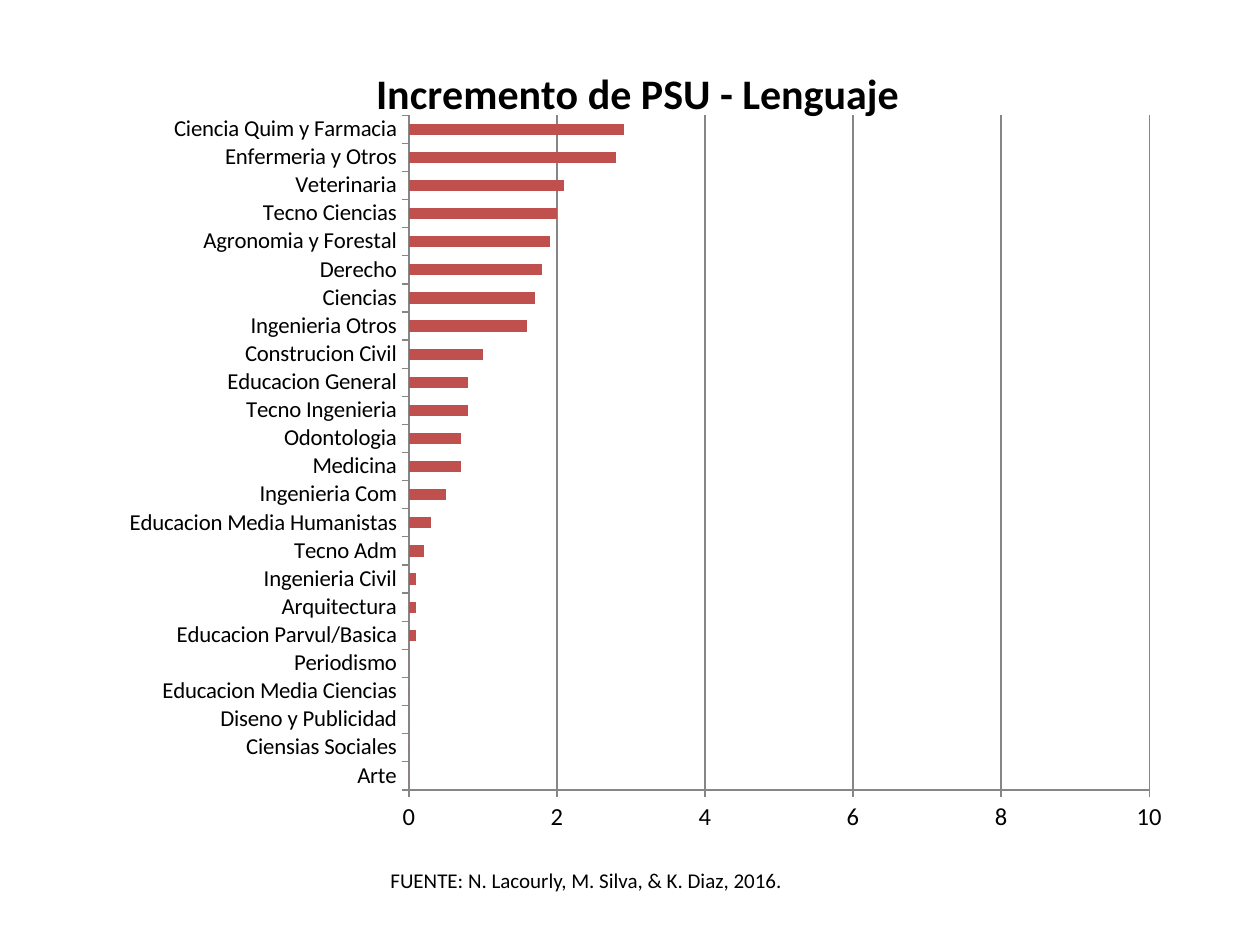
import pptx
import pptx.chart.data
import pptx.dml.color
import pptx.enum.chart
import pptx.enum.text
import pptx.oxml
import pptx.oxml.ns
import pptx.util

SLIDE_WIDTH, SLIDE_HEIGHT = 10, 7.5
FONT = "Calibri"
BLACK, AXIS_GRAY, BAR_RED = "000000", "868686", "C0504D"
PLOT_SHARES = {"x": 0.29, "y": 0.1, "w": 0.68, "h": 0.84}

INCREMENTS = [
    ("Arte", 0),
    ("Ciensias Sociales", 0),
    ("Diseno y Publicidad", 0),
    ("Educacion Media Ciencias", 0),
    ("Periodismo", 0),
    ("Educacion Parvul/Basica", 0.1),
    ("Arquitectura", 0.1),
    ("Ingenieria Civil", 0.1),
    ("Tecno Adm", 0.2),
    ("Educacion Media Humanistas", 0.3),
    ("Ingenieria Com", 0.5),
    ("Medicina", 0.7),
    ("Odontologia", 0.7),
    ("Tecno Ingenieria", 0.8),
    ("Educacion General", 0.8),
    ("Construcion Civil", 1),
    ("Ingenieria Otros", 1.6),
    ("Ciencias", 1.7),
    ("Derecho", 1.8),
    ("Agronomia y Forestal", 1.9),
    ("Tecno Ciencias", 2),
    ("Veterinaria", 2.1),
    ("Enfermeria y Otros", 2.8),
    ("Ciencia Quim y Farmacia", 2.9),
]


def color(hex_string):
    return pptx.dml.color.RGBColor.from_string(hex_string)


def area(left, top, width, height):
    return [
        pptx.util.Inches(share * side)
        for share, side in zip(
            (left, top, width, height), (SLIDE_WIDTH, SLIDE_HEIGHT) * 2
        )
    ]


def format_font(font, size, bold=False, hex_string=BLACK):
    font.name = FONT
    font.size = pptx.util.Pt(size)
    font.bold = bold
    font.color.rgb = color(hex_string)


def write_text(frame, text, **font_format):
    run = frame.paragraphs[0].add_run()
    run.text = text
    format_font(run.font, **font_format)


def format_line(line):
    line.color.rgb = color(AXIS_GRAY)
    line.width = pptx.util.Pt(0.75)


def format_axis(axis, size):
    axis.major_tick_mark = pptx.enum.chart.XL_TICK_MARK.OUTSIDE
    axis.minor_tick_mark = pptx.enum.chart.XL_TICK_MARK.NONE
    format_font(axis.tick_labels.font, size)
    format_line(axis.format.line)


def place_plot(chart, shares):
    plot_area = chart.plots[0]._element.getparent()
    for automatic in plot_area.findall(pptx.oxml.ns.qn("c:layout")):
        plot_area.remove(automatic)
    places = "".join(f'<c:{side} val="{share}"/>' for side, share in shares.items())
    plot_area.insert(0, pptx.oxml.parse_xml(
        f'<c:layout {pptx.oxml.ns.nsdecls("c")}><c:manualLayout>'
        '<c:layoutTarget val="inner"/><c:xMode val="edge"/><c:yMode val="edge"/>'
        f'{places}</c:manualLayout></c:layout>'
    ))


def add_increment_chart(slide):
    data = pptx.chart.data.CategoryChartData()
    data.categories = [career for career, _ in INCREMENTS]
    data.add_series("Series 1", [increment for _, increment in INCREMENTS])
    chart = slide.shapes.add_chart(
        pptx.enum.chart.XL_CHART_TYPE.BAR_STACKED,
        *area(0.074, 0.037, 0.864, 0.85), data,
    ).chart
    format_font(chart.font, 10)
    chart.has_legend = False
    write_text(
        chart.chart_title.text_frame, "Incremento de PSU - Lenguaje", size=24, bold=True
    )

    format_axis(chart.category_axis, 13)
    increment_axis = chart.value_axis
    format_axis(increment_axis, 14)
    increment_axis.minimum_scale = 0
    increment_axis.maximum_scale = 10
    increment_axis.major_unit = 2
    increment_axis.tick_labels.number_format = "General"
    increment_axis.tick_labels.number_format_is_linked = False
    format_line(increment_axis.major_gridlines.format.line)

    bars = chart.plots[0]
    bars.gap_width = 150
    bars.overlap = 100
    bars.vary_by_categories = False
    fill = bars.series[0].format.fill
    fill.solid()
    fill.fore_color.rgb = color(BAR_RED)
    place_plot(chart, PLOT_SHARES)


def add_citation(slide):
    frame = slide.shapes.add_textbox(*area(0.3, 0.912, 0.388, 0.04)).text_frame
    frame.word_wrap = True
    frame.auto_size = pptx.enum.text.MSO_AUTO_SIZE.SHAPE_TO_FIT_TEXT
    write_text(frame, "FUENTE: N. Lacourly, M. Silva, & K. Diaz, 2016.", size=12)


def main():
    presentation = pptx.Presentation()
    presentation.slide_width = pptx.util.Inches(SLIDE_WIDTH)
    presentation.slide_height = pptx.util.Inches(SLIDE_HEIGHT)
    slide = presentation.slides.add_slide(presentation.slide_layouts[6])
    add_increment_chart(slide)
    add_citation(slide)
    presentation.save("out.pptx")


if __name__ == "__main__":
    main()
